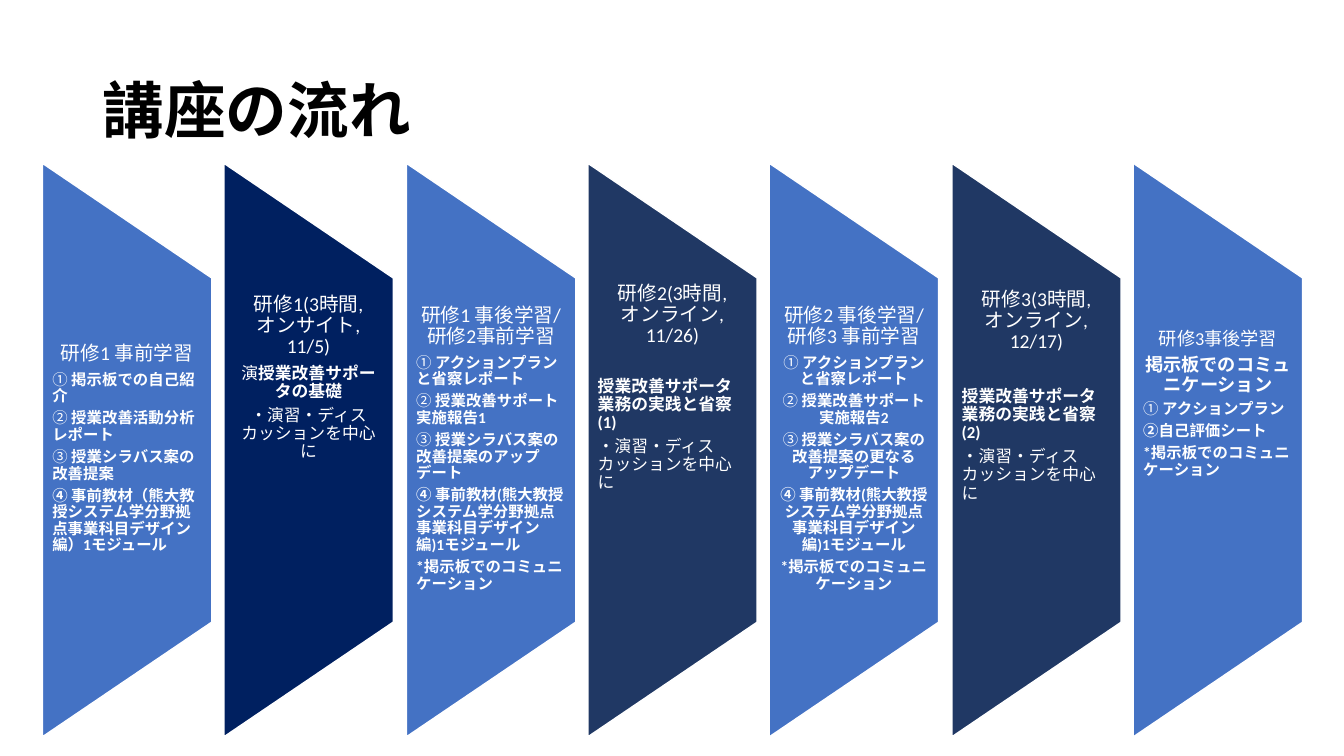
from pptx import Presentation, util as u
from pptx.dml.color import RGBColor
from pptx.enum import shapes, text
from pptx.oxml.ns import qn
from lxml import etree

PX = 9144  # one px is a hundredth of an inch
HUES = {"ink": "000000", "paper": "FFFFFF", "blue": "4472C4",
        "navy": "002060", "slate": "203864"}
LATIN, ASIAN = "Calibri", "Noto Sans CJK JP"
MID, LEFT = text.PP_ALIGN.CENTER, text.PP_ALIGN.LEFT


class Deck:
    """Holds the style and the current slide."""

    def __init__(self, wide, high):
        self.prs = Presentation()
        self.prs.slide_width, self.prs.slide_height = wide * PX, high * PX
        self.slide = self.prs.slides.add_slide(self.prs.slide_layouts[6])

    def hue(self, name):
        return RGBColor.from_string(HUES[name])

    def frame(self, x, y, w, h, side, foot):
        box = self.slide.shapes.add_textbox(x * PX, y * PX, w * PX, h * PX)
        tf = box.text_frame
        tf.word_wrap = True
        tf.vertical_anchor = text.MSO_ANCHOR.MIDDLE
        tf.margin_left = tf.margin_right = side * PX
        tf.margin_top, tf.margin_bottom = 0, foot * PX
        return tf

    def run(self, para, words, size, bold, hue, face=LATIN):
        run = para.add_run()
        run.text = words
        font = run.font
        font.size, font.bold, font.name = u.Pt(size), bold, face
        font.color.rgb = self.hue(hue)
        east = etree.SubElement(run._r.get_or_add_rPr(), qn("a:ea"))
        east.set("typeface", ASIAN)

    def title(self, words, x, y, w, h):
        para = self.frame(x, y, w, h, 10, 0).paragraphs[0]
        para.line_spacing = 0.9
        self.run(para, words, 44, True, "ink", ASIAN)

    def arrow(self, x, y, w, h, hue):
        # The preset lies on its side, so width and height swap about the centre
        kind = shapes.MSO_SHAPE.FLOWCHART_MANUAL_OPERATION
        shape = self.slide.shapes.add_shape(
            kind, x * PX + (w - h) * PX // 2, y * PX + (h - w) * PX // 2,
            h * PX, w * PX)
        shape.rotation = 270
        shape.shadow.inherit = False
        shape.fill.solid()
        shape.fill.fore_color.rgb = self.hue(hue)
        shape.line.color.rgb = self.hue("paper")
        shape.line.width = u.Pt(1)

    def body(self, x, y, w, h, paras, foot):
        tf = self.frame(x, y, w, h, 10, foot)
        for i, (align, size, runs, gap) in enumerate(paras):
            para = tf.add_paragraph() if i else tf.paragraphs[0]
            para.alignment, para.line_spacing = align, 0.9
            para.space_before = u.Pt(gap)
            para.space_after = u.Pt(0.35 * size)
            for words, bold in runs:
                if words == "\n":
                    para.add_line_break()
                elif words:
                    self.run(para, words, size, bold, "paper")


# Paragraph makers
def head(*lines, size=14):
    runs = [(lines[0], False)]
    for line in lines[1:]:
        runs += [("\n", False), (line, False)]
    return MID, size, runs, 0


def item(mark, words, size=11, align=LEFT, gap=0):
    return align, size, [(mark, False), (words, True)], gap


def plain(words, align=LEFT):
    return align, 12, [(words, False)], 0


BOARD = "掲示板でのコミュニケーション"
TALK = "・演習・ディスカッションを中心に"


def study(title, turn, update, align):
    return [head(title),
            item("① ", "アクションプランと省察レポート", align=align),
            item("② ", "授業改善サポート実施報告" + turn, align=align),
            item("③ ", "授業シラバス案の改善提案の" + update, align=align),
            item("", "④ 事前教材(熊大教授システム学分野拠点事業科目デザイン編)1モジュール",
                 align=align),
            item("", "*" + BOARD, align=align)]


def online(title, date, turn, gap):
    return [head(title, "オンライン, " + date),
            item("", f"授業改善サポータ業務の実践と省察({turn})", 12, gap=gap),
            plain(TALK)]


# Steps: colour, space kept free below the text, paragraphs
STEPS = [
    ("blue", 0, [
        head("研修1 事前学習"),
        item("① ", "掲示板での自己紹介"),
        item("② ", "授業改善活動分析レポート"),
        item("③ ", "授業シラバス案の改善提案"),
        item("", "④ 事前教材（熊大教授システム学分野拠点事業科目デザイン編）1モジュール")]),
    ("navy", 141, [
        head("研修1(3時間,", "オンサイト, 11/5)"),
        item("演", "授業改善サポータの基礎", 12, MID),
        plain(TALK, MID)]),
    ("blue", 0, study("研修1 事後学習/ 研修2事前学習", "1", "アップデート", LEFT)),
    ("slate", 121, online("研修2(3時間,", "11/26)", 1, 17)),
    ("blue", 0, study("研修2 事後学習/ 研修3 事前学習", "2", "更なるアップデート", MID)),
    ("slate", 105, online("研修3(3時間,", "12/17)", 2, 20)),
    ("blue", 89, [
        head("研修3事後学習", size=13),
        item("", BOARD, 13, MID),
        item("① ", "アクションプラン"),
        item("", "②自己評価シート"),
        item("", "*" + BOARD)]),
]


def main():
    deck = Deck(1333, 750)
    deck.title("講座の流れ", 92, 40, 1150, 145)
    # Seven arrows at an equal pitch
    for i, (hue, foot, paras) in enumerate(STEPS):
        x = round(42 + 180.3 * i)
        deck.arrow(x, 162, 168, 569, hue)
        deck.body(x, 275, 168, 341, paras, foot)
    deck.prs.save("out.pptx")


if __name__ == "__main__":
    main()
